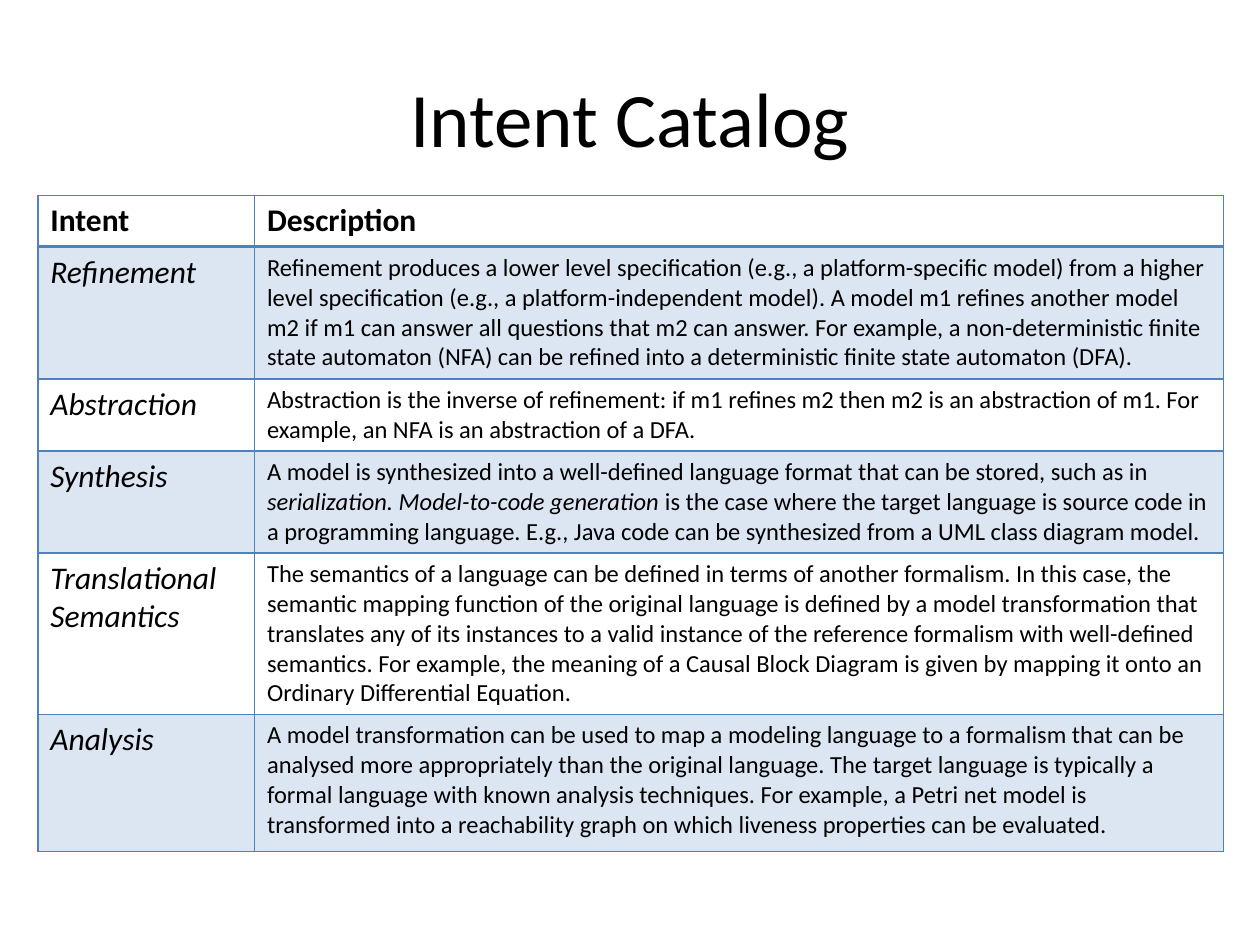
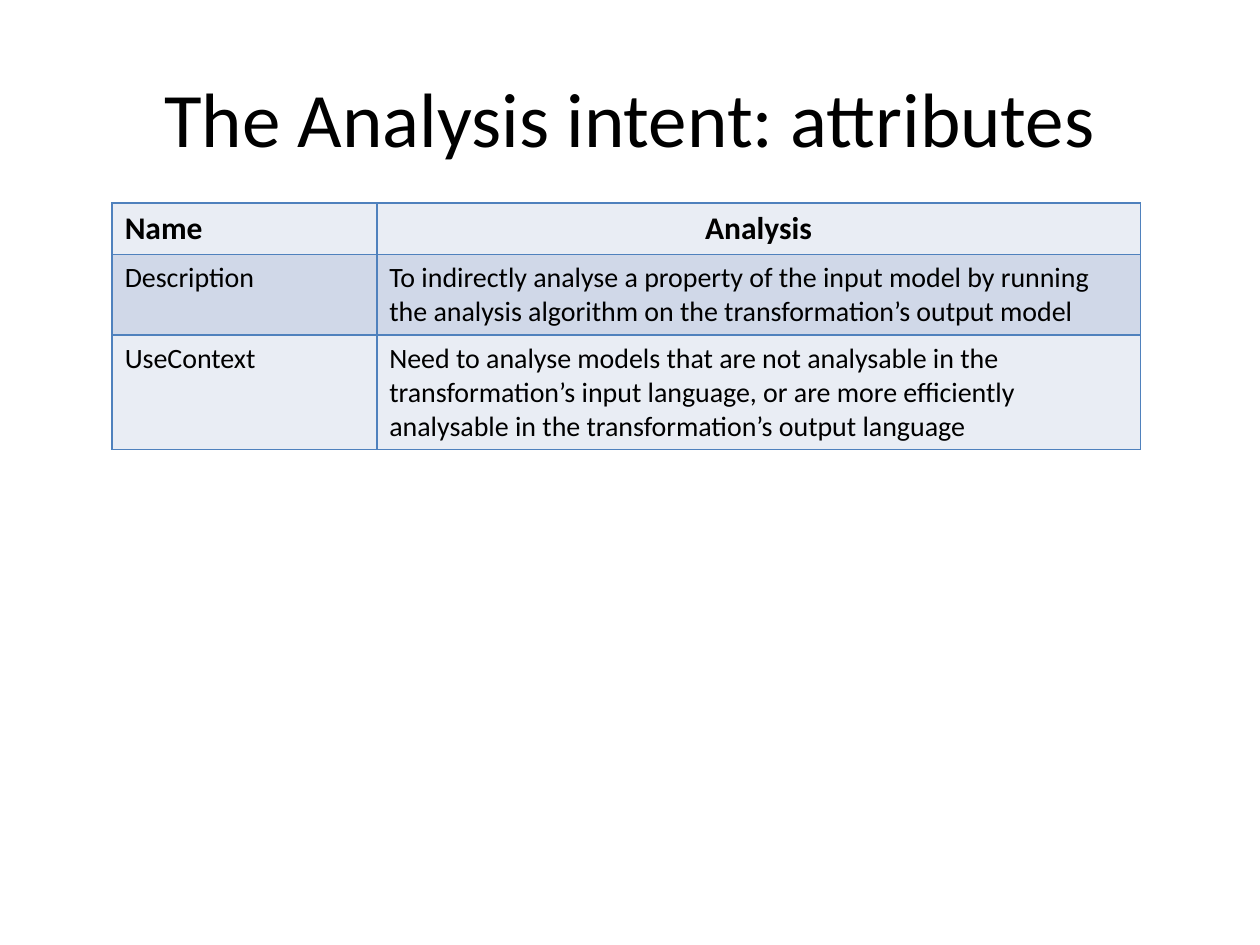
import pptx
import pptx.util
import pptx.dml.color
import pptx.enum.text
from lxml import etree

Inches = pptx.util.Inches
Pt = pptx.util.Pt
ALIGN = pptx.enum.text.PP_ALIGN
ANCHOR = pptx.enum.text.MSO_ANCHOR
NS = "http://schemas.openxmlformats.org/drawingml/2006/main"

# Shared look
FONT = "Calibri"
INK, RULE = "000000", "4F81BD"
TINT, LIGHT, DARK = "DCE6F2", "E9EDF4", "D0D8E8"
TITLE_BOX = (0.5, 0.3, 9, 1.25)

INTENTS = [
    ("Refinement", "Refinement produces a lower level specification (e.g., a platform-specific "
     "model) from a higher level specification (e.g., a platform-independent model). A model m1 "
     "refines another model m2 if m1 can answer all questions that m2 can answer. For example, a "
     "non-deterministic finite state automaton (NFA) can be refined into a deterministic finite "
     "state automaton (DFA)."),
    ("Abstraction", "Abstraction is the inverse of refinement: if m1 refines m2 then m2 is an "
     "abstraction of m1. For example, an NFA is an abstraction of a DFA."),
    ("Synthesis", [
        ("A model is synthesized into a well-defined language format that can be stored, such "
         "as in ", False),
        ("serialization. Model-to-code generation ", True),
        ("is the case where the target language is source code in a programming language. E.g., "
         "Java code can be synthesized from a UML class diagram model.", False)]),
    ("Translational Semantics", "The semantics of a language can be defined in terms of another "
     "formalism. In this case, the semantic mapping function of the original language is defined "
     "by a model transformation that translates any of its instances to a valid instance of the "
     "reference formalism with well-defined semantics. For example, the meaning of a Causal Block "
     "Diagram is given by mapping it onto an Ordinary Differential Equation."),
    ("Analysis", "A model transformation can be used to map a modeling language to a formalism "
     "that can be analysed more appropriately than the original language. The target language is "
     "typically a formal language with known analysis techniques. For example, a Petri net model "
     "is transformed into a reachability graph on which liveness properties can be evaluated."),
]
TRAITS = [
    ("Description", "To indirectly analyse a property of the input model by running the analysis "
     "algorithm on the transformation’s output model"),
    ("UseContext", "Need to analyse models that are not analysable in the transformation’s input "
     "language, or are more efficiently analysable in the transformation’s output language"),
]


def color(code):
    return pptx.dml.color.RGBColor.from_string(code)


def write(frame, text, size=18, bold=False, italic=False, align=ALIGN.LEFT):
    """Text is a string, or a list of (string, italic) pairs."""
    frame.word_wrap = True
    para = frame.paragraphs[0]
    para.alignment = align
    for part, slant in ([(text, italic)] if isinstance(text, str) else text):
        run = para.add_run()
        run.text = part
        font = run.font
        font.name, font.size = FONT, Pt(size)
        font.bold, font.italic = bold, slant
        font.color.rgb = color(INK)


def add_title(slide, text, box=TITLE_BOX):
    frame = slide.shapes.add_textbox(*map(Inches, box)).text_frame
    frame.vertical_anchor = ANCHOR.MIDDLE
    write(frame, text, size=44, align=ALIGN.CENTER)


def border(cell, top=1, bottom=1):
    props = cell._tc.get_or_add_tcPr()
    for side, width in (("L", 1), ("R", 1), ("T", top), ("B", bottom)):
        line = etree.SubElement(props, f"{{{NS}}}ln{side}", w=str(Pt(width)))
        fill = etree.SubElement(line, f"{{{NS}}}solidFill")
        etree.SubElement(fill, f"{{{NS}}}srgbClr", val=RULE)


def add_grid(slide, box, widths, heights, fills, rule=1):
    """Empty ruled table; row fills alternate, rule is the line under the head."""
    grid = slide.shapes.add_table(len(heights), len(widths), *map(Inches, box)).table
    grid.first_row = grid.horz_banding = False
    for col, width in zip(grid.columns, widths):
        col.width = Inches(width)
    for at, (row, height) in enumerate(zip(grid.rows, heights)):
        row.height = Inches(height)
        shade = fills[at % 2]
        for cell in row.cells:
            border(cell, top=rule if at == 1 else 1, bottom=rule if at == 0 else 1)
            if shade:
                cell.fill.solid()
                cell.fill.fore_color.rgb = color(shade)
            else:
                cell.fill.background()
    return grid


def fill_rows(grid, rows, name, body):
    for at, (label, text) in enumerate(rows, 1):
        write(grid.cell(at, 0).text_frame, label, **name)
        write(grid.cell(at, 1).text_frame, text, **body)


def catalog(slide, box):
    add_title(slide, "Intent Catalog")
    grid = add_grid(slide, box, (1.72, 7.69), (0.41, 1.05, 0.57, 0.81, 1.28, 1.09),
                    (None, TINT), rule=2)
    for at, head in enumerate(("Intent", "Description")):
        write(grid.cell(0, at).text_frame, head, bold=True)
    fill_rows(grid, INTENTS, {"italic": True}, {"size": 14})


def traits(slide, box):
    add_title(slide, "The Analysis intent: attributes")
    grid = add_grid(slide, box, (2.1, 6.06), (0.41, 0.64, 0.91), (LIGHT, DARK))
    write(grid.cell(0, 0).text_frame, "Name", bold=True)
    write(grid.cell(0, 1).text_frame, "Analysis", bold=True, align=ALIGN.CENTER)
    fill_rows(grid, TRAITS, {"size": 16}, {"size": 16})


def main():
    deck = pptx.Presentation()
    deck.slide_width, deck.slide_height = Inches(10), Inches(7.5)
    blank = deck.slide_layouts[6]
    catalog(deck.slides.add_slide(blank), (0.3, 1.55, 9.41, 5.21))
    traits(deck.slides.add_slide(blank), (0.89, 1.61, 8.16, 1.96))
    deck.save("out.pptx")


if __name__ == "__main__":
    main()
